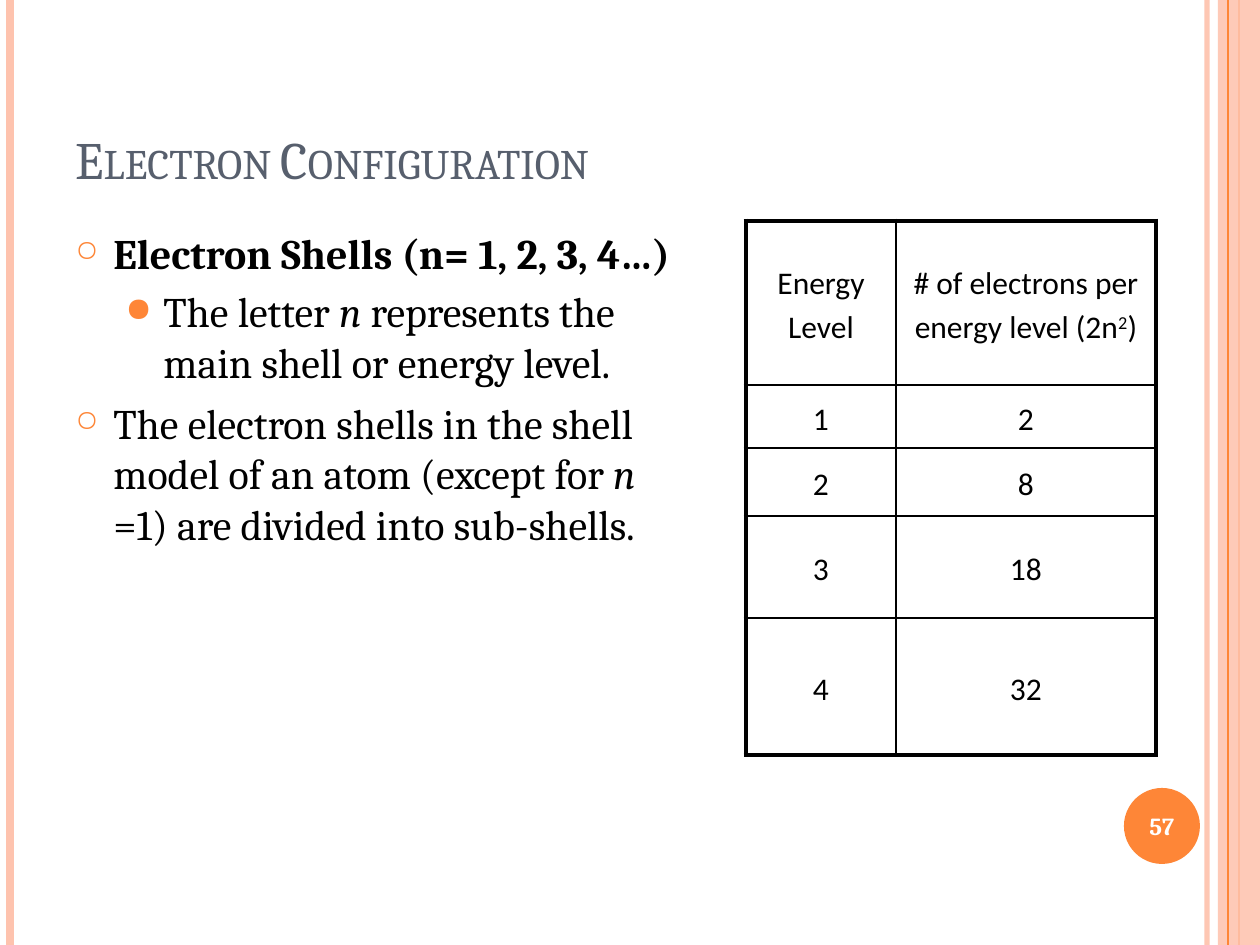
from lxml import etree
from pptx import Presentation, util as u
from pptx.dml.color import RGBColor
from pptx.enum import shapes, text
from pptx.oxml.ns import qn

PX = u.Inches(1) / 126
WIDTH, HEIGHT = 1260, 945
ORANGE, PEACH, SLATE, BLACK, WHITE = "FE8637", "FEC3AE", "575F6D", "000000", "FFFFFF"

TITLE = "Electron Configuration"
PAGE_NUMBER = "57"
# x in px, colour, width in points, opacity in percent
STRIPES_BEHIND = [(1207, PEACH, 3, 93), (10, PEACH, 4.5, 100), (1239, ORANGE, 1.5, 100)]
STRIPE_IN_FRONT = (1228, ORANGE, 0.75, 100)

# level, bold, runs as (wording, italic)
POINTS = [
    (0, True, [("Electron Shells (n= 1, 2, 3, 4…)", False)]),
    (1, False, [("The letter ", False), ("n ", True),
                ("represents the main shell or energy level.", False)]),
    (0, False, [("The electron shells in the shell model of an atom (except for ", False),
                ("n ", True), ("=1) are divided into sub-shells.", False)]),
]
# bullet, size in percent, left margin in px, space before in points
LEVELS = [("○", 70, 38, 6), ("●", 80, 88, 4.8)]
HANGING = 38

# runs as (wording, is superscript)
ENERGY_LEVELS = [
    ([("Energy Level", False)],
     [("# of electrons per energy level (2n", False), ("2", True), (")", False)]),
    *[([(level, False)], [(electrons, False)])
      for level, electrons in [("1", "2"), ("2", "8"), ("3", "18"), ("4", "32")]],
]
COLUMN_WIDTHS = [150, 260]
ROW_HEIGHTS = [164, 63, 68, 102, 137]


def px(*lengths):
    return [u.Emu(round(length * PX)) for length in lengths]


def rgb(colour):
    return RGBColor.from_string(colour)


def add_xml(parent, tag, **attributes):
    return etree.SubElement(parent, qn(tag), attributes)


def set_opacity(parent, percent):
    if percent < 100:
        colour = next(parent.iter(qn("a:srgbClr")))
        add_xml(colour, "a:alpha", val=str(percent * 1000))


def set_font(font, name, size, colour, bold=False):
    font.name, font.size, font.bold = name, u.Pt(size), bold
    font.color.rgb = rgb(colour)


def add_stripe(slide, x, colour, width, opacity):
    stripe = slide.shapes.add_connector(
        shapes.MSO_CONNECTOR.STRAIGHT, *px(x, 0, x, HEIGHT))
    stripe.line.color.rgb = rgb(colour)
    stripe.line.width = u.Pt(width)
    set_opacity(stripe.line._ln, opacity)
    add_xml(stripe._element.spPr, "a:effectLst")


def add_filled(slide, kind, place, colour):
    shape = slide.shapes.add_shape(kind, *px(*place))
    shape.shadow.inherit = False
    shape.fill.solid()
    shape.fill.fore_color.rgb = rgb(colour)
    shape.line.fill.background()
    return shape


def add_frame(slide, place, anchor):
    frame = slide.shapes.add_textbox(*px(*place)).text_frame
    frame.word_wrap = True
    frame.vertical_anchor = anchor
    return frame


def add_decoration(slide):
    for stripe in STRIPES_BEHIND:
        add_stripe(slide, *stripe)
    band = add_filled(slide, shapes.MSO_SHAPE.RECTANGLE, (1218, 0, 42, HEIGHT), PEACH)
    set_opacity(band._element.spPr, 87)
    add_stripe(slide, *STRIPE_IN_FRONT)


def add_page_number(slide):
    badge = add_filled(slide, shapes.MSO_SHAPE.OVAL, (1124, 788, 76, 76), ORANGE)
    frame = badge.text_frame
    frame.margin_left = frame.margin_right = frame.margin_top = frame.margin_bottom = 0
    frame.vertical_anchor = text.MSO_ANCHOR.MIDDLE
    number = frame.paragraphs[0]
    number.text = PAGE_NUMBER
    number.alignment = text.PP_ALIGN.CENTER
    set_font(number.font, "Cambria", 14, WHITE, bold=True)


def add_title(slide):
    frame = add_frame(slide, (63, 38, 1029, 158), text.MSO_ANCHOR.BOTTOM)
    title = frame.paragraphs[0]
    title.text = TITLE
    set_font(title.font, "Cambria", 30, SLATE)
    title.font._element.set("cap", "small")


def add_bullet(paragraph, level):
    bullet, percent, margin, space = LEVELS[level]
    paragraph.level = level
    paragraph.space_before = u.Pt(space)
    properties = paragraph._p.get_or_add_pPr()
    left, hanging = px(margin, HANGING)
    properties.set("marL", str(left))
    properties.set("indent", str(-hanging))
    add_xml(add_xml(properties, "a:buClr"), "a:srgbClr", val=ORANGE)
    add_xml(properties, "a:buSzPct", val=str(percent * 1000))
    add_xml(properties, "a:buChar", char=bullet)


def add_points(slide):
    frame = add_frame(slide, (63, 221, 620, 672), text.MSO_ANCHOR.TOP)
    for i, (level, bold, runs) in enumerate(POINTS):
        point = frame.add_paragraph() if i else frame.paragraphs[0]
        add_bullet(point, level)
        set_font(point.font, "Cambria", 24, BLACK, bold)
        for wording, italic in runs:
            run = point.add_run()
            run.text = wording
            run.font.italic = italic


def set_borders(cell, widths):
    """Draw the left, right, top and bottom borders, widths in points."""
    properties = cell._tc.get_or_add_tcPr()
    for i, (side, width) in enumerate(zip("LRTB", widths)):
        border = etree.Element(qn(f"a:ln{side}"), w=str(u.Pt(width)))
        add_xml(add_xml(border, "a:solidFill"), "a:srgbClr", val=BLACK)
        properties.insert(i, border)


def fill_cell(cell, runs):
    cell.fill.background()
    cell.vertical_anchor = text.MSO_ANCHOR.MIDDLE
    cell.margin_left, cell.margin_right = px(9, 9)
    cell.margin_top = cell.margin_bottom = 0
    entry = cell.text_frame.paragraphs[0]
    entry.alignment = text.PP_ALIGN.CENTER
    entry.line_spacing = 1.15
    entry.space_after = u.Pt(10)
    set_font(entry.font, "Calibri", 18, BLACK)
    for wording, superscript in runs:
        run = entry.add_run()
        run.text = wording
        if superscript:
            run.font._element.set("baseline", "30000")


def add_energy_table(slide):
    rows, columns = len(ROW_HEIGHTS), len(COLUMN_WIDTHS)
    place = px(746, 221, sum(COLUMN_WIDTHS), sum(ROW_HEIGHTS))
    table = slide.shapes.add_table(rows, columns, *place).table
    table.first_row = table.horz_banding = False
    for column, width in zip(table.columns, px(*COLUMN_WIDTHS)):
        column.width = width
    for row, height in zip(table.rows, px(*ROW_HEIGHTS)):
        row.height = height
    for r, entries in enumerate(ENERGY_LEVELS):
        for c, runs in enumerate(entries):
            cell = table.cell(r, c)
            fill_cell(cell, runs)
            outer = (c == 0, c == columns - 1, r == 0, r == rows - 1)
            set_borders(cell, [3 if edge else 1 for edge in outer])


def main():
    deck = Presentation()
    deck.slide_width, deck.slide_height = px(WIDTH, HEIGHT)
    slide = deck.slides.add_slide(deck.slide_layouts[6])
    add_decoration(slide)
    add_page_number(slide)
    add_title(slide)
    add_points(slide)
    add_energy_table(slide)
    deck.save("out.pptx")


if __name__ == "__main__":
    main()
